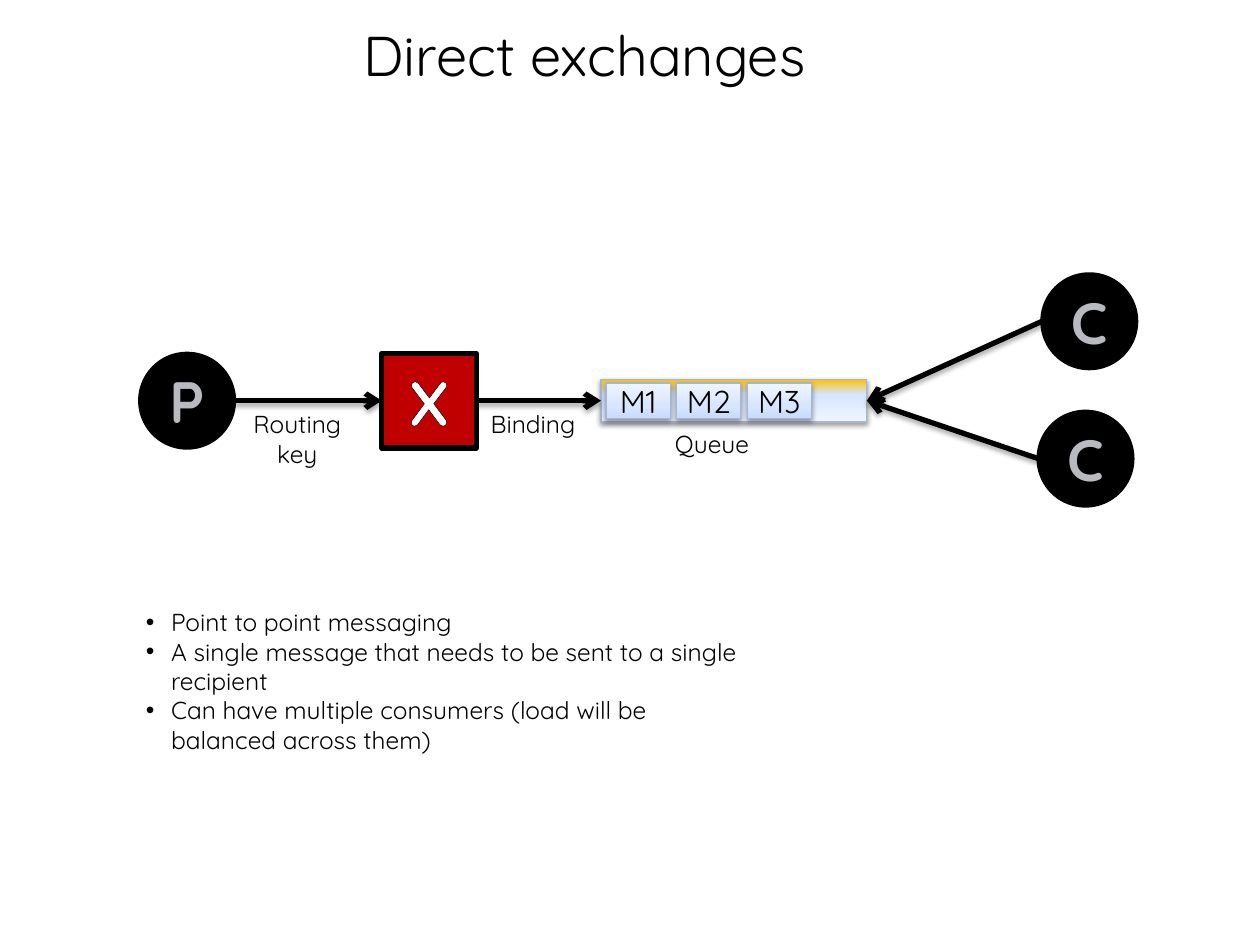
"""Build a slide that explains direct exchanges with a message flow diagram."""
from copy import deepcopy

from lxml.etree import SubElement
from pptx import Presentation
from pptx.dml.color import RGBColor
from pptx.enum.shapes import MSO_CONNECTOR as Connector, MSO_SHAPE as Shape
from pptx.enum.text import MSO_ANCHOR as Anchor, PP_ALIGN as Align
from pptx.oxml.ns import qn
from pptx.util import Inches, Pt

FONT = "Quicksand"
BLACK, WHITE, GREY, RED, EDGE = "000000", "FFFFFF", "B9BAC0", "C00000", "A5B7D3"
QUEUE_FILL = ["FFC000", "D7E5FE", "EFF5FF"]
MESSAGE_FILL = ["C8DBFE", "D7E5FE", "EFF5FF"]
STOPS = [0, 0.35, 1]

TITLE = "Direct exchanges"
MESSAGES = ["M1", "M2", "M3"]
BULLETS = [
    "Point to point messaging",
    "A single message that needs to be sent to a single recipient",
    "Can have multiple consumers (load will be balanced across them)",
]

AXIS, NODE = 3.18, 0.75
PRODUCER, EXCHANGE = (1.11, AXIS), (3.03, AXIS)
CONSUMERS = [(8.27, 2.55), (8.24, 3.64)]
QUEUE_LEFT, QUEUE_WIDTH, QUEUE_HEIGHT = 4.77, 2.11, 0.34
MESSAGE_LEFT, MESSAGE_STEP, MESSAGE_WIDTH, MESSAGE_HEIGHT = 4.81, 0.56, 0.51, 0.28
LABELS = [
    ("Queue", 5.14, 3.36, 1.02),
    ("Binding", 3.72, 3.2, 1.02),
    ("Routing key", 1.76, 3.2, 1.2),
]
QUEUE_RIGHT = QUEUE_LEFT + QUEUE_WIDTH
ARROWS = [((left, middle), (QUEUE_RIGHT, AXIS)) for left, middle in CONSUMERS] + [
    ((EXCHANGE[0] + NODE, AXIS), (QUEUE_LEFT, AXIS)),
    ((PRODUCER[0] + NODE, AXIS), (EXCHANGE[0], AXIS)),
]


def color(value):
    return RGBColor.from_string(value)


def add_shadow(element, alpha, distance):
    properties = element.spPr
    effects = properties.find(qn("a:effectLst"))
    if effects is None:
        effects = SubElement(properties, qn("a:effectLst"))
    shadow = SubElement(effects, qn("a:outerShdw"), blurRad=str(Pt(3.1)),
                        dist=str(Pt(distance)), dir="5400000", rotWithShape="0")
    tint = SubElement(shadow, qn("a:srgbClr"), val=BLACK)
    SubElement(tint, qn("a:alpha"), val=str(alpha * 1000))


def style_text(paragraph, text, size, shade=BLACK, align=Align.CENTER):
    paragraph.add_run().text = text
    paragraph.alignment = align
    font = paragraph.font
    font.name, font.size, font.color.rgb = FONT, Pt(size), color(shade)
    return font


def add_box(slide, kind, left, middle, width, height, line, line_width):
    shape = slide.shapes.add_shape(
        kind, Inches(left), Inches(middle - height / 2), Inches(width), Inches(height))
    shape.shadow.inherit = False
    shape.line.color.rgb, shape.line.width = color(line), Pt(line_width)
    frame = shape.text_frame
    frame.margin_left = frame.margin_right = frame.margin_top = frame.margin_bottom = 0
    frame.word_wrap, frame.vertical_anchor = False, Anchor.MIDDLE
    return shape


def add_gradient_box(slide, left, width, height, shades, angle):
    shape = add_box(slide, Shape.RECTANGLE, left, AXIS, width, height, EDGE, 0.75)
    shape.fill.gradient()
    shape.fill.gradient_angle = angle
    stops = shape._element.spPr.find(".//" + qn("a:gsLst"))
    stops.append(deepcopy(stops[0]))
    for stop, shade, position in zip(shape.fill.gradient_stops, shades, STOPS):
        stop.color.rgb, stop.position = color(shade), position
    add_shadow(shape._element, 38, 1.6)
    return shape


def add_node(slide, kind, place, letter, size, shade, fill, line_width):
    shape = add_box(slide, kind, *place, NODE, NODE, BLACK, line_width)
    shape.fill.solid()
    shape.fill.fore_color.rgb = color(fill)
    paragraph = shape.text_frame.paragraphs[0]
    style_text(paragraph, letter, size, shade).bold = True
    properties = paragraph._p.pPr.find(qn("a:defRPr"))
    outline = properties.makeelement(qn("a:ln"), w=str(Pt(1)))
    properties.insert(0, outline)
    SubElement(SubElement(outline, qn("a:solidFill")), qn("a:srgbClr"), val=BLACK)


def add_arrow(slide, start, end):
    arrow = slide.shapes.add_connector(
        Connector.STRAIGHT, *(Inches(value) for value in start + end))
    arrow.line.color.rgb, arrow.line.width = color(BLACK), Pt(3)
    SubElement(arrow._element.spPr.find(qn("a:ln")), qn("a:tailEnd"), type="arrow")
    add_shadow(arrow._element, 35, 1.8)


def add_text(slide, left, top, width, height):
    box = slide.shapes.add_textbox(*(Inches(value) for value in (left, top, width, height)))
    box.text_frame.word_wrap = True
    return box.text_frame


def add_bullets(slide):
    frame = add_text(slide, 1.06, 4.77, 5, 1.28)
    for index, text in enumerate(BULLETS):
        paragraph = frame.add_paragraph() if index else frame.paragraphs[0]
        style_text(paragraph, text, 14, align=Align.LEFT)
        properties = paragraph._p.get_or_add_pPr()
        properties.set("marL", str(Inches(0.2)))
        properties.set("indent", str(-Inches(0.2)))
        properties.insert(0, properties.makeelement(qn("a:buFont"), typeface="Arial"))
        properties.insert(1, properties.makeelement(qn("a:buChar"), char="•"))


def main():
    presentation = Presentation()
    presentation.slide_width, presentation.slide_height = Inches(10), Inches(7.5)
    slide = presentation.slides.add_slide(presentation.slide_layouts[6])

    add_gradient_box(slide, QUEUE_LEFT, QUEUE_WIDTH, QUEUE_HEIGHT, QUEUE_FILL, 270)
    add_node(slide, Shape.OVAL, PRODUCER, "P", 33.3, GREY, BLACK, 2)
    add_node(slide, Shape.RECTANGLE, EXCHANGE, "X", 36, WHITE, RED, 3)
    for place in CONSUMERS:
        add_node(slide, Shape.OVAL, place, "C", 33.3, GREY, BLACK, 2)
    for start, end in ARROWS:
        add_arrow(slide, start, end)
    for index, name in enumerate(MESSAGES):
        message = add_gradient_box(slide, MESSAGE_LEFT + index * MESSAGE_STEP,
                                   MESSAGE_WIDTH, MESSAGE_HEIGHT, MESSAGE_FILL, 90)
        style_text(message.text_frame.paragraphs[0], name, 18)

    title = add_text(slide, 0.47, 0.12, 8.34, 0.63)
    title.vertical_anchor = Anchor.BOTTOM
    style_text(title.paragraphs[0], TITLE, 32)
    title.paragraphs[0].line_spacing = 0.9
    for text, left, top, width in LABELS:
        style_text(add_text(slide, left, top, width, 0.34).paragraphs[0], text, 14)
    add_bullets(slide)
    presentation.save("out.pptx")


if __name__ == "__main__":
    main()
